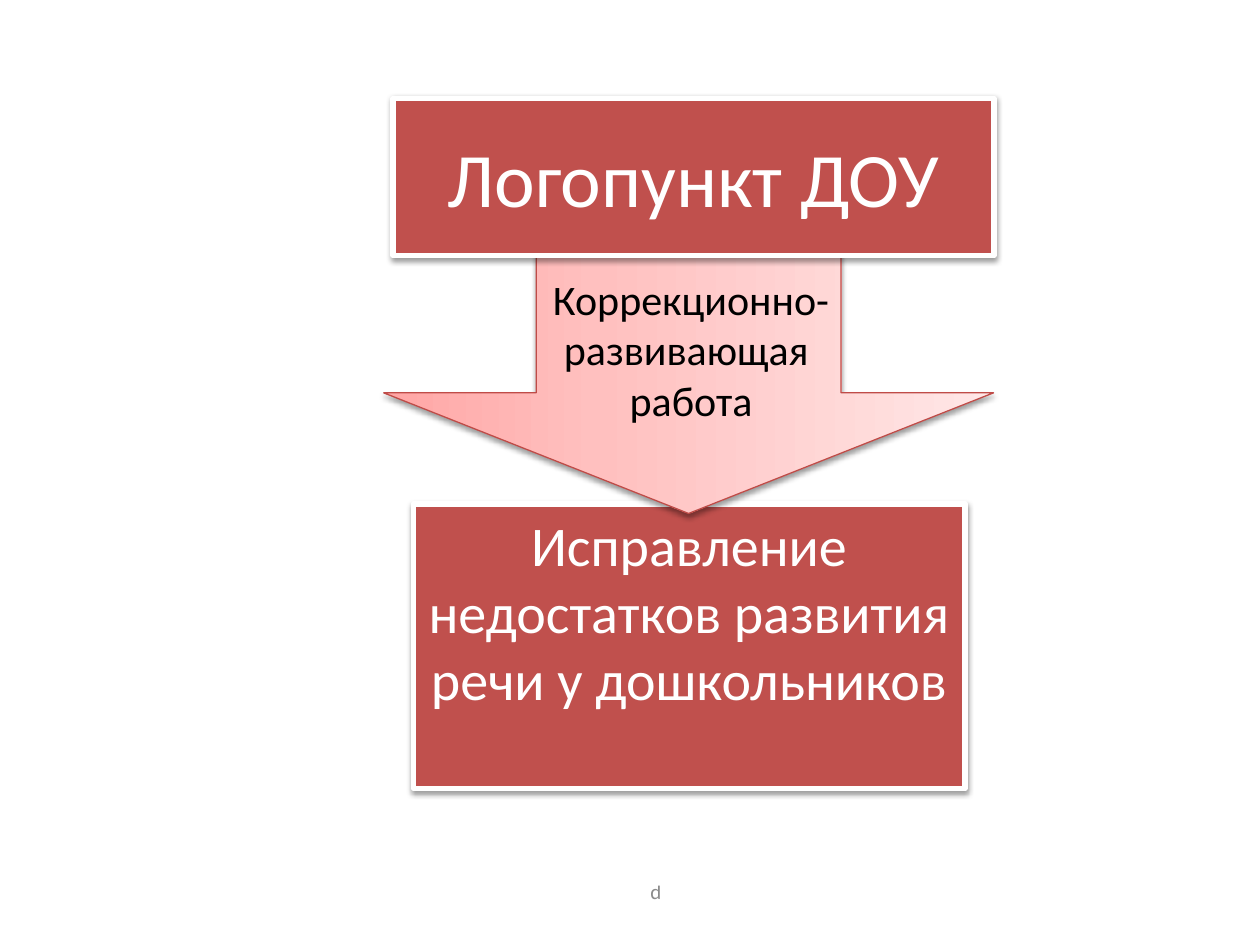
from lxml import etree
from pptx import Presentation
from pptx import util as u
from pptx.dml.color import RGBColor
from pptx.enum import shapes, text
from pptx.oxml import parse_xml
from pptx.oxml.ns import nsdecls, qn

COLORS = {
    "red": "C0504D",
    "outline": "BF4C48",
    "white": "FFFFFF",
    "black": "000000",
    "gray": "8C8C8C",
}
ARROW_STOPS = [(0, "FFA6A5"), (35, "FFC0BF"), (100, "FFE7E7")]


class SlideBuilder:
    def __init__(self, prs, font="Calibri"):
        self.s = prs.slides.add_slide(prs.slide_layouts[6])
        self.font = font

    def rgb(self, name):
        return RGBColor.from_string(COLORS[name])

    def add_text(self, sp, lines, size, color, anchor, wrap=True):
        tf = sp.text_frame
        tf.word_wrap = wrap
        tf.vertical_anchor = anchor
        p = tf.paragraphs[0]
        p.alignment = text.PP_ALIGN.CENTER
        for i, line in enumerate(lines):
            if i:
                p.add_line_break()
            r = p.add_run()
            r.text = line
            r.font.name = self.font
            r.font.size = u.Pt(size)
            r.font.color.rgb = self.rgb(color)

    def outline(self, sp, color, width):
        """Set the line and the soft shadow that falls below the shape."""
        sp.line.color.rgb = self.rgb(color)
        sp.line.width = u.Pt(width)
        sp.shadow.inherit = False
        effects = sp._element.spPr.find(qn("a:effectLst"))
        shadow = etree.SubElement(
            effects, qn("a:outerShdw"), blurRad=str(u.Pt(3.1)),
            dist=str(u.Pt(1.6)), dir="5400000", rotWithShape="0")
        clr = etree.SubElement(shadow, qn("a:srgbClr"), val=COLORS["black"])
        etree.SubElement(clr, qn("a:alpha"), val="38000")

    def box(self, at, words, size, anchor):
        sp = self.s.shapes.add_shape(
            shapes.MSO_SHAPE.RECTANGLE, *map(u.Inches, at))
        sp.fill.solid()
        sp.fill.fore_color.rgb = self.rgb("red")
        self.outline(sp, "white", 3)
        self.add_text(sp, [words], size, "white", anchor)

    def down_arrow(self, at):
        sp = self.s.shapes.add_shape(
            shapes.MSO_SHAPE.RIGHT_ARROW, *map(u.Inches, at))
        sp.rotation = 90
        sp.adjustments[0] = 0.5
        sp.adjustments[1] = 0.437
        self.outline(sp, "outline", 0.75)
        stops = "".join(
            f'<a:gs pos="{pos * 1000}"><a:srgbClr val="{c}"/></a:gs>'
            for pos, c in ARROW_STOPS)
        grad = parse_xml(
            f'<a:gradFill {nsdecls("a")} rotWithShape="1"><a:gsLst>{stops}'
            '</a:gsLst><a:lin ang="16200000" scaled="1"/></a:gradFill>')
        sp._element.spPr.find(qn("a:prstGeom")).addnext(grad)

    def label(self, at, lines, size, color, anchor, wrap=True, rotation=0):
        sp = self.s.shapes.add_textbox(*map(u.Inches, at))
        sp.rotation = rotation
        self.add_text(sp, lines, size, color, anchor, wrap)


def main():
    prs = Presentation()
    prs.slide_width, prs.slide_height = u.Inches(10), u.Inches(7.5)
    top, middle = text.MSO_ANCHOR.TOP, text.MSO_ANCHOR.MIDDLE

    b = SlideBuilder(prs)
    b.label((4.08, 7, 2.25, 0.25), ["р"], 12, "gray", middle, rotation=180)
    b.box((3.28, 4, 4.38, 2.26),
          "Исправление недостатков развития речи у дошкольников", 32, top)
    b.down_arrow((4.37, 0.56, 2.19, 4.84))
    b.box((3.12, 0.78, 4.77, 1.25), "Логопункт ДОУ", 44, middle)
    b.label((4.26, 2.12, 2.45, 1.3),
            ["Коррекционно-", "развивающая ", "работа"], 24, "black", top,
            wrap=False)
    prs.save("out.pptx")


if __name__ == "__main__":
    main()
